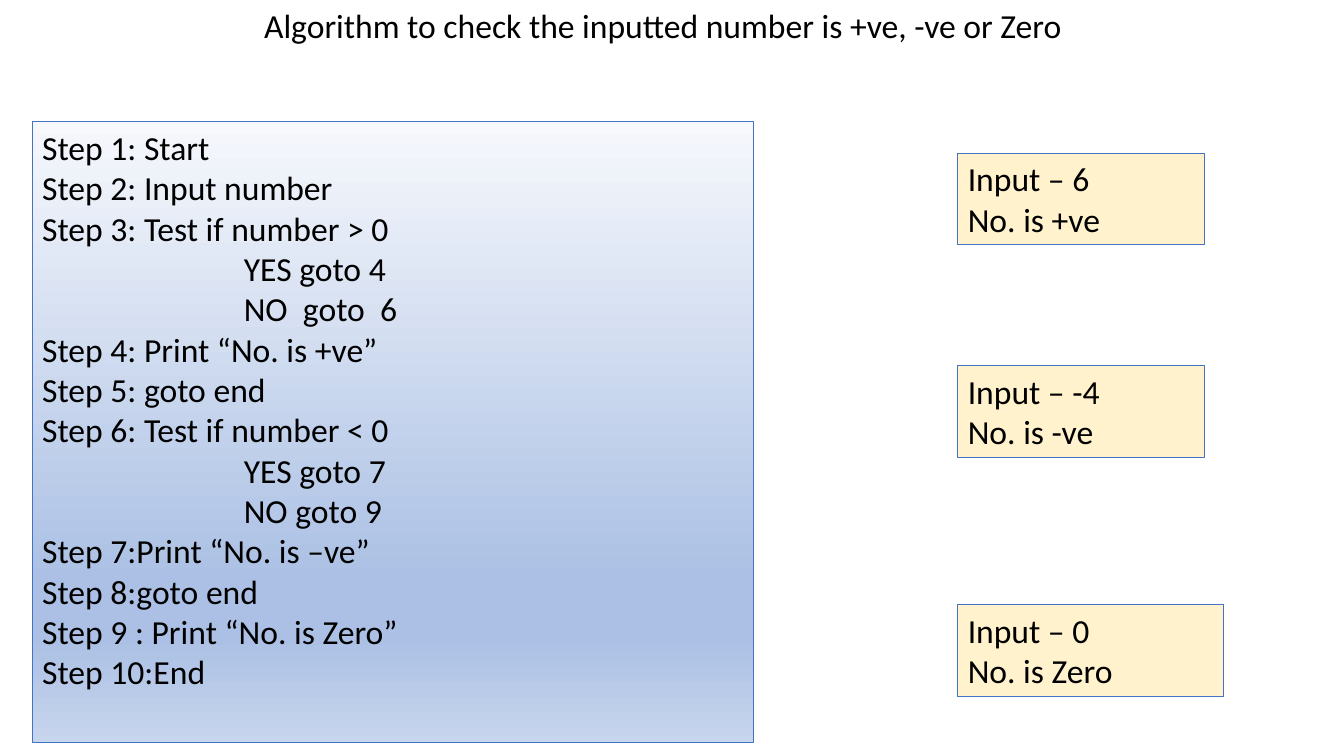
from copy import deepcopy
from dataclasses import dataclass

from pptx import Presentation
from pptx import util as u
from pptx.dml.color import RGBColor
from pptx.enum import shapes, text
from pptx.oxml.ns import qn


@dataclass(frozen=True)
class Theme:
    """Colours, type and line sizes of the slide."""
    font: str = "Calibri"
    size: int = 24
    ink: str = "000000"
    edge: str = "4472C4"
    edge_width: float = 0.75
    card: str = "FFF2CC"
    panel: tuple = ((0, "F6F8FC"), (0.74, "ABC0E4"), (0.83, "ABC0E4"), (1, "C7D5ED"))
    indent: float = 2


class AlgorithmSlide:
    """Draws styled elements, placed in percent of the slide's size."""

    def __init__(self, deck, theme):
        """Add a title-only slide to the deck."""
        self.deck, self.theme = deck, theme
        self.slide = deck.slides.add_slide(deck.slide_layouts[5])

    def area(self, left, top, width, height):
        """Turn percentages into lengths."""
        across, down = self.deck.slide_width / 100, self.deck.slide_height / 100
        return [u.Emu(round(share * unit)) for share, unit in
                zip((left, top, width, height), (across, down, across, down))]

    def set_lines(self, shape, lines):
        """Fill a shape with left-aligned lines, indenting the branches."""
        frame = shape.text_frame
        frame.text = "\n".join(lines)
        frame_format = {"word_wrap": True, "auto_size": text.MSO_AUTO_SIZE.NONE,
                        "vertical_anchor": text.MSO_ANCHOR.TOP}
        for name, value in frame_format.items():
            setattr(frame, name, value)
        font_format = {"name": self.theme.font, "size": u.Pt(self.theme.size)}
        for para in frame.paragraphs:
            para.alignment = text.PP_ALIGN.LEFT
            if para.text.startswith(("YES", "NO ")):
                para._p.get_or_add_pPr().set("marL", str(u.Inches(self.theme.indent)))
            for span in para.runs:
                span.font.color.rgb = RGBColor.from_string(self.theme.ink)
                for name, value in font_format.items():
                    setattr(span.font, name, value)

    def title(self, place, words):
        """Move the title placeholder and set its words."""
        box = self.slide.shapes.title
        for name, value in zip(("left", "top", "width", "height"), self.area(*place)):
            setattr(box, name, value)
        self.set_lines(box, [words])

    def box(self, place, lines):
        """Add an outlined rectangle with text."""
        box = self.slide.shapes.add_shape(shapes.MSO_SHAPE.RECTANGLE, *self.area(*place))
        box.shadow.inherit = False
        box.line.color.rgb = RGBColor.from_string(self.theme.edge)
        box.line.width = u.Pt(self.theme.edge_width)
        self.set_lines(box, lines)
        return box

    def card(self, place, lines):
        """Add a plain-filled box."""
        fill = self.box(place, lines).fill
        fill.solid()
        fill.fore_color.rgb = RGBColor.from_string(self.theme.card)

    def panel(self, place, lines):
        """Add a box with a gradient running downwards."""
        box = self.box(place, lines)
        box.fill.gradient()
        box.fill.gradient_angle = 270
        stops = next(box._element.iter(qn("a:gsLst")))
        while len(stops) < len(self.theme.panel):
            stops.append(deepcopy(stops[0]))
        for stop, (position, colour) in zip(box.fill.gradient_stops, self.theme.panel):
            stop.position = position
            stop.color.rgb = RGBColor.from_string(colour)


STEPS = [
    "Step 1: Start",
    "Step 2: Input number",
    "Step 3: Test if number > 0",
    "YES goto 4",
    "NO  goto  6",
    "Step 4: Print “No. is +ve”",
    "Step 5: goto end",
    "Step 6: Test if number < 0",
    "YES goto 7",
    "NO goto 9",
    "Step 7:Print “No. is –ve”",
    "Step 8:goto end",
    "Step 9 : Print “No. is Zero”",
    "Step 10:End",
]
EXAMPLES = [
    (20.27, 18.38, "6", "+ve"),
    (48.4, 18.38, "-4", "-ve"),
    (80, 19.8, "0", "Zero"),
]


def main():
    """Build and save the deck."""
    deck = Presentation()
    deck.slide_width, deck.slide_height = u.Inches(13.33), u.Inches(7.5)
    page = AlgorithmSlide(deck, Theme())
    page.title((18.9, 0, 66.39, 6.67),
               "Algorithm to check the inputted number is +ve, -ve or Zero")
    page.panel((2.4, 16.13, 53.64, 82.13), STEPS)
    for top, width, number, sign in EXAMPLES:
        page.card((71.27, top, width, 12.13), [f"Input – {number}", f"No. is {sign}"])
    deck.save("out.pptx")


if __name__ == "__main__":
    main()
